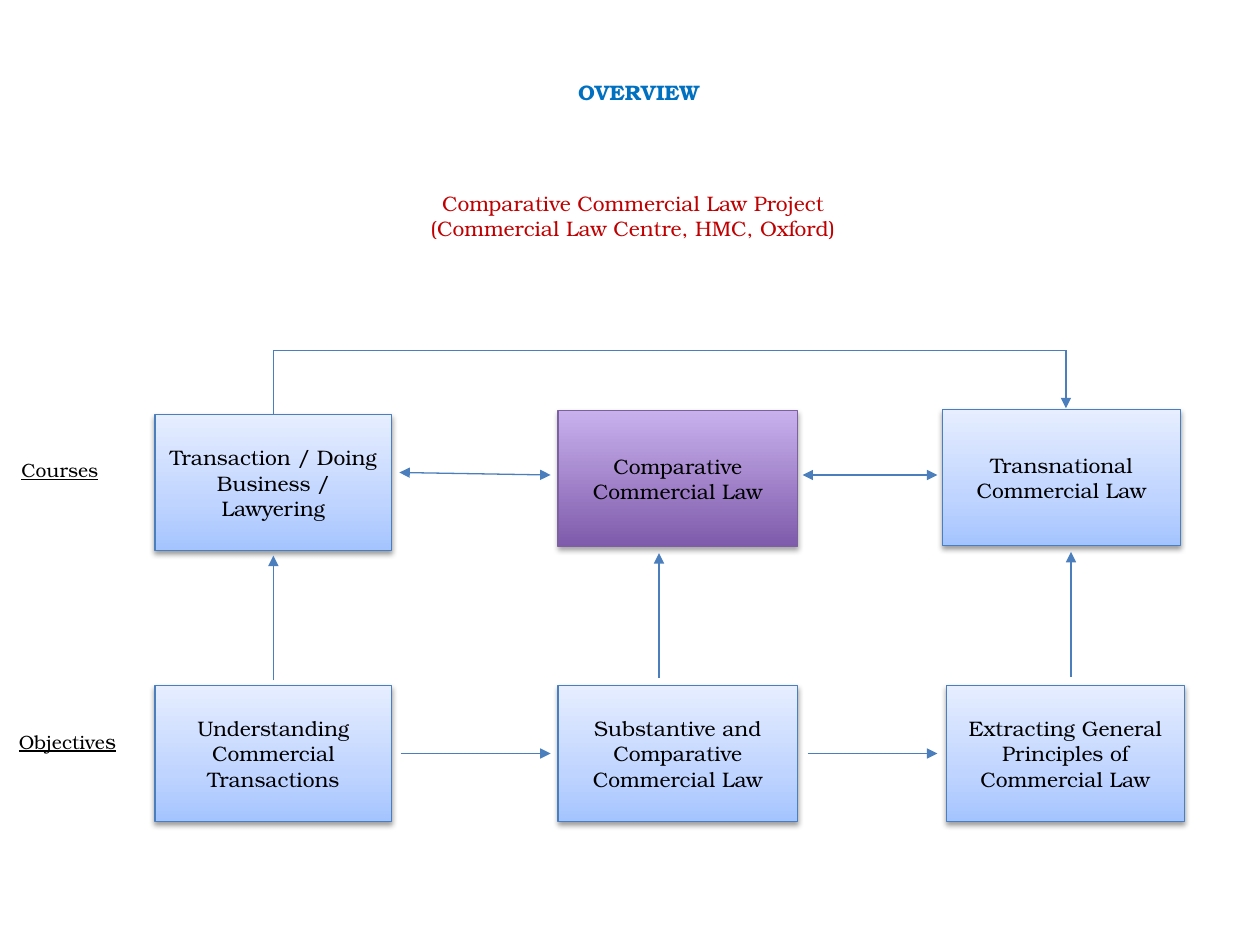
from lxml.etree import SubElement
from pptx import Presentation
from pptx.dml.color import RGBColor
from pptx.enum.shapes import MSO_CONNECTOR, MSO_SHAPE
from pptx.enum.text import MSO_ANCHOR, PP_ALIGN
from pptx.oxml.ns import qn
from pptx.util import Inches, Pt

CELL = Inches(0.1)
COLS, ROWS = 100, 75
FONT = "TeX Gyre Bonum"
BLACK = RGBColor(0x00, 0x00, 0x00)
RED = RGBColor(0xC0, 0x00, 0x00)
TITLE = RGBColor(0x00, 0x70, 0xC0)
BLUE = RGBColor(0x4B, 0x7E, 0xBC)
PLUM = RGBColor(0x7D, 0x60, 0xA0)
SKY = [(0, RGBColor(0xA4, 0xC4, 0xFF)), (35, RGBColor(0xBF, 0xD4, 0xFF)),
       (100, RGBColor(0xE6, 0xEE, 0xFF))]
LILAC = [(0, RGBColor(0x7F, 0x5B, 0xAB)), (100, RGBColor(0xC8, 0xB0, 0xED))]


def cells(*nums):
    return [int(n * CELL) for n in nums]


def add_run(para, text, size=12, color=BLACK, bold=False, under=False):
    run = para.add_run()
    run.text = text
    font = run.font
    font.name, font.size, font.bold, font.underline = FONT, Pt(size), bold, under
    font.color.rgb = color


def set_frame(shape, anchor):
    frame = shape.text_frame
    frame.word_wrap = True
    frame.vertical_anchor = anchor
    frame.paragraphs[0].alignment = PP_ALIGN.CENTER
    return frame


def add_text(slide, box):
    return set_frame(slide.shapes.add_textbox(*cells(*box)), MSO_ANCHOR.TOP)


def add_color(parent, color):
    return SubElement(parent, qn("a:srgbClr"), val=str(color))


def add_shade(shape, stops):
    shape.fill.gradient()
    shape.fill.gradient_angle = 90
    group = shape.fill._xPr.find(qn("a:gradFill")).find(qn("a:gsLst"))
    for old in list(group):
        group.remove(old)
    for spot, color in stops:
        add_color(SubElement(group, qn("a:gs"), pos=str(spot * 1000)), color)


def add_shadow(shape, alpha, drop):
    shape.shadow.inherit = False
    effects = shape._element.spPr.find(qn("a:effectLst"))
    outer = SubElement(effects, qn("a:outerShdw"), blurRad=str(Pt(3.1)),
                       dist=str(Pt(drop)), dir="5400000", rotWithShape="0")
    SubElement(add_color(outer, BLACK), qn("a:alpha"), val=str(alpha * 1000))


def add_tile(slide, box, lines, main=False):
    tile = slide.shapes.add_shape(MSO_SHAPE.RECTANGLE, *cells(*box))
    add_shade(tile, LILAC if main else SKY)
    tile.line.color.rgb = PLUM if main else BLUE
    tile.line.width = Pt(0.75)
    add_shadow(tile, *((35, 1.8) if main else (38, 1.6)))
    para = set_frame(tile, MSO_ANCHOR.MIDDLE).paragraphs[0]
    for i, line in enumerate(lines):
        if i:
            para.add_line_break()
        add_run(para, line)


def add_link(slide, ends, head=False, tail=True, kind=MSO_CONNECTOR.STRAIGHT):
    link = slide.shapes.add_connector(kind, *cells(*ends))
    link.line.color.rgb = BLUE
    link.line.width = Pt(0.75)
    for tag, show in (("a:headEnd", head), ("a:tailEnd", tail)):
        if show:
            SubElement(link.line._get_or_add_ln(), qn(tag), type="triangle")
    SubElement(link._element.spPr, qn("a:effectLst"))
    return link


def add_bend(slide, left, top, width, height):
    mid_x, mid_y = left + width / 2, top + height / 2
    ends = (mid_x + height / 2, mid_y + width / 2,
            mid_x - height / 2, mid_y - width / 2)
    bend = add_link(slide, ends, tail=False, kind=MSO_CONNECTOR.ELBOW)
    props = bend._element.spPr
    props.find(qn("a:xfrm")).set("rot", "5400000")
    props.find(qn("a:prstGeom")).set("prst", "bentConnector2")


def add_header(slide, left, top, width, height):
    title = slide.shapes.title
    title.left, title.top, title.width, title.height = cells(
        left + 17.6, top, 14, 3.6)
    frame = set_frame(title, MSO_ANCHOR.TOP)
    add_run(frame.paragraphs[0], "OVERVIEW", color=TITLE, bold=True)
    frame = add_text(slide, (left, top + 8.8, width, height - 8.8))
    add_run(frame.paragraphs[0], "Comparative Commercial Law Project", color=RED)
    para = frame.add_paragraph()
    para.alignment = PP_ALIGN.CENTER
    add_run(para, "(Commercial Law Centre, HMC, Oxford)", color=RED)


def add_row(slide, left, top, width, height, tiles):
    for x, y, wide, lines, main in tiles:
        add_tile(slide, (left + x, top + y, wide, height), lines, main)


def add_labels(slide, left, top, width, height):
    para = add_text(slide, (left, top, width - 0.8, 3.6)).paragraphs[0]
    add_run(para, "Courses", 11, under=True)
    box = (left + 0.2, top + height - 3.6, width, 3.6)
    para = add_text(slide, box).paragraphs[0]
    add_run(para, "Objective", 11, under=True)
    add_run(para, "s", under=True)


def add_links(slide, left, top, width, height):
    add_bend(slide, left, top, width, 5.1)
    add_link(slide, (left + width, top, left + width, top + 4.6))
    for x, y in ((0, 26.2), (30.6, 26), (63.3, 25.9)):
        add_link(slide, (left + x, top + y, left + x, top + y - 9.9))
    base = top + height
    for start, end in ((10.1, 22), (42.4, 52.7)):
        add_link(slide, (left + start, base, left + end, base))
    for start, end, rise in ((10, 22, 0.2), (42, 52.7, 0)):
        add_link(slide, (left + start, top + 9.9 - rise, left + end, top + 9.9),
                 head=True)


def main():
    deck = Presentation()
    deck.slide_width, deck.slide_height = cells(COLS, ROWS)
    slide = deck.slides.add_slide(deck.slide_layouts[5])
    add_header(slide, 26.1, 5.8, 48.3, 21.7)
    add_row(slide, 12.3, 32.5, 81.4, 10.8, [
        (0, 0.4, 18.8, ["Transaction / Doing", "Business / Lawyering"], False),
        (32, 0.1, 19, ["Comparative Commercial Law"], True),
        (62.5, 0, 18.9, ["Transnational Commercial Law"], False)])
    add_row(slide, 12.3, 54.4, 81.7, 10.8, [
        (0, 0, 18.8, ["Understanding Commercial Transactions"], False),
        (32, 0, 19, ["Substantive and Comparative Commercial Law"], False),
        (62.8, 0, 18.9, ["Extracting General Principles of Commercial Law"], False)])
    add_labels(slide, 0, 35.9, 10.3, 25)
    add_links(slide, 21.7, 27.8, 62.9, 32)
    deck.save("out.pptx")


if __name__ == "__main__":
    main()
